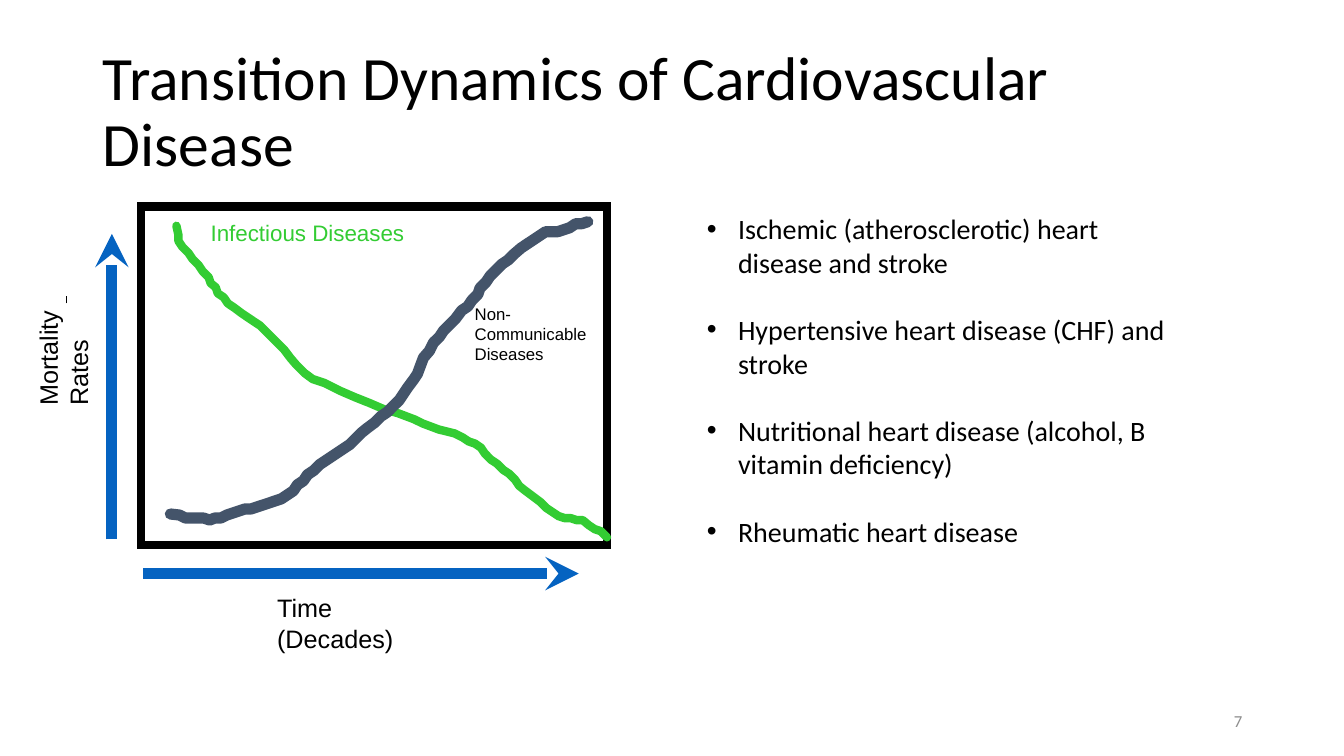
import pptx
import pptx.dml.color
import pptx.enum.shapes
import pptx.enum.text
import pptx.oxml
import pptx.oxml.ns
import pptx.util
from pptx.util import Inches

INFECTIOUS = [
    (175, 224), (177, 233), (177, 239), (181, 245), (187, 251), (191, 257), (197, 263),
    (201, 269), (207, 275), (209, 281), (214, 285), (216, 291), (222, 295), (226, 301),
    (232, 305), (240, 311), (246, 315), (252, 319), (258, 323), (264, 329), (270, 335),
    (276, 341), (282, 347), (288, 355), (294, 362), (302, 370), (310, 376), (322, 380),
    (338, 388), (352, 394), (367, 400), (381, 406), (395, 410), (411, 416), (419, 420),
    (435, 426), (451, 430), (459, 434), (465, 438), (471, 440), (477, 444), (481, 450),
    (487, 456), (493, 460), (499, 466), (505, 470), (511, 476), (515, 482), (520, 486),
    (528, 492), (536, 498), (542, 504), (548, 508), (554, 512), (560, 514), (566, 514),
    (572, 516), (578, 516), (584, 521), (590, 525), (596, 527), (602, 533),
]
NON_COMMUNICABLE = [
    (169, 510), (178, 511), (184, 514), (190, 514), (196, 514), (202, 514), (208, 516),
    (213, 514), (219, 514), (225, 511), (231, 509), (237, 507), (243, 505), (249, 505),
    (255, 503), (261, 501), (267, 499), (273, 497), (279, 495), (285, 491), (291, 487),
    (295, 481), (301, 477), (305, 471), (311, 467), (317, 461), (323, 457), (329, 453),
    (335, 449), (341, 445), (347, 441), (353, 435), (359, 429), (364, 425), (372, 419),
    (378, 413), (384, 409), (390, 403), (396, 397), (400, 391), (404, 385), (410, 377),
    (414, 371), (420, 355), (426, 348), (430, 340), (436, 334), (440, 328), (446, 322),
    (452, 316), (458, 308), (464, 304), (468, 298), (474, 292), (476, 286), (482, 280),
    (486, 274), (492, 268), (498, 262), (504, 258), (510, 252), (517, 246), (523, 242),
    (529, 238), (535, 234), (541, 230), (547, 230), (553, 230), (559, 228), (565, 226),
    (571, 222), (577, 222), (583, 220),
]
CAUSES = [
    "Ischemic (atherosclerotic) heart disease and stroke",
    "Hypertensive heart disease (CHF) and stroke",
    "Nutritional heart disease (alcohol, B vitamin deficiency)",
    "Rheumatic heart disease",
]


def colour(value):
    return pptx.dml.color.RGBColor.from_string(value)


class SlideBuilder:
    """Draws styled elements on one slide."""

    BLACK, ARROW, GREEN, SLATE, GREY = "000000", "0563C1", "33CC33", "44546A", "8C8C8C"
    HEADING_FONT, LABEL_FONT = "Calibri", "Arial"

    def __init__(self, slide):
        self.slide = slide

    def place(self, shape, left, top, width, height):
        shape.left, shape.top = Inches(left), Inches(top)
        shape.width, shape.height = Inches(width), Inches(height)

    def style(self, paragraph, size, font, hex_value):
        paragraph.font.size = pptx.util.Pt(size)
        paragraph.font.name = font
        paragraph.font.color.rgb = colour(hex_value)

    def stroke(self, shape, hex_value, width):
        shape.line.color.rgb = colour(hex_value)
        shape.line.width = pptx.util.Pt(width)

    def add_xml(self, parent, tag, **attributes):
        child = pptx.oxml.ns.qn(tag)
        element = parent.makeelement(child, attributes)
        parent.append(element)

    def title(self, text, *box):
        heading = self.slide.shapes.title
        self.place(heading, *box)
        heading.text_frame.text = text
        heading.text_frame.vertical_anchor = pptx.enum.text.MSO_ANCHOR.MIDDLE
        heading.text_frame.auto_size = pptx.enum.text.MSO_AUTO_SIZE.NONE
        paragraph = heading.text_frame.paragraphs[0]
        paragraph.alignment = pptx.enum.text.PP_ALIGN.LEFT
        paragraph.line_spacing = 0.9
        self.style(paragraph, 44, self.HEADING_FONT, self.BLACK)

    def bullets(self, items, *box):
        body = self.slide.placeholders[1]
        self.place(body, *box)
        body.text_frame.text = "\n".join(items)
        body.text_frame.auto_size = pptx.enum.text.MSO_AUTO_SIZE.NONE
        for paragraph in body.text_frame.paragraphs:
            self.style(paragraph, 20, self.HEADING_FONT, self.BLACK)
            paragraph.space_before = pptx.util.Pt(0)
            paragraph.space_after = pptx.util.Pt(24)
            properties = paragraph._p.get_or_add_pPr()
            properties.set("marL", str(Inches(0.31)))
            properties.set("indent", str(Inches(-0.31)))
            self.add_xml(properties, "a:buFont", typeface="Arial")
            self.add_xml(properties, "a:buChar", char="•")

    def label(self, text, box, size=18, hex_value=BLACK, font=LABEL_FONT, wrap=True,
              rotation=0, align=pptx.enum.text.PP_ALIGN.LEFT,
              anchor=pptx.enum.text.MSO_ANCHOR.TOP):
        caption = self.slide.shapes.add_textbox(*map(Inches, box))
        caption.rotation = rotation
        caption.text_frame.word_wrap = wrap
        caption.text_frame.vertical_anchor = anchor
        caption.text_frame.text = text
        for paragraph in caption.text_frame.paragraphs:
            paragraph.alignment = align
            self.style(paragraph, size, font, hex_value)

    def frame(self, *box):
        border = self.slide.shapes.add_shape(
            pptx.enum.shapes.MSO_SHAPE.RECTANGLE, *map(Inches, box))
        border.shadow.inherit = False
        border.fill.background()
        self.stroke(border, self.BLACK, 6)
        self.add_xml(border.line._get_or_add_ln(), "a:miter", lim="800000")

    def line(self, start, end, hex_value, width, arrow=False):
        axis = self.slide.shapes.add_connector(
            pptx.enum.shapes.MSO_CONNECTOR.STRAIGHT, *map(Inches, start + end))
        self.stroke(axis, hex_value, width)
        if arrow:
            self.add_xml(axis.line._get_or_add_ln(), "a:tailEnd", type="stealth")
        self.add_xml(axis._element.spPr, "a:effectLst")

    def curve(self, points, hex_value, width):
        builder = self.slide.shapes.build_freeform(*points[0], scale=Inches(0.01))
        builder.add_line_segments(points[1:], close=False)
        trend = builder.convert_to_shape()
        trend.shadow.inherit = False
        trend.fill.background()
        self.stroke(trend, hex_value, width)
        outline = trend.line._get_or_add_ln()
        outline.set("cap", "rnd")
        self.add_xml(outline, "a:round")


def main():
    deck = pptx.Presentation()
    deck.slide_width, deck.slide_height = Inches(13.33), Inches(7.5)
    page = SlideBuilder(deck.slides.add_slide(deck.slide_layouts[1]))

    page.title("Transition Dynamics of Cardiovascular Disease", 0.92, 0.4, 11.5, 1.45)
    page.bullets(CAUSES, 6.91, 2.05, 4.97, 3.77)

    page.frame(1.4, 2.05, 4.62, 3.36)
    page.line((1.11, 5.35), (1.11, 2.32), page.ARROW, 8, arrow=True)
    page.line((0.66, 3.01), (0.66, 2.94), page.BLACK, 1)
    page.line((1.42, 5.69), (5.74, 5.69), page.ARROW, 8, arrow=True)
    page.label("Time (Decades)", (2.65, 5.83, 1.52, 0.71))
    page.label("Mortality Rates", (0.03, 3.17, 1.2, 0.71), rotation=270)

    page.curve(INFECTIOUS, page.GREEN, 6)
    page.label("Infectious Diseases", (1.99, 2.13, 2.15, 0.37), 16, page.GREEN, wrap=False)
    page.curve(NON_COMMUNICABLE, page.SLATE, 8)
    page.label("Non-\nCommunicable\nDiseases", (4.61, 2.96, 1.44, 0.71), 12)

    page.label("7", (9.42, 6.95, 3, 0.4), 12, page.GREY, page.HEADING_FONT,
               align=pptx.enum.text.PP_ALIGN.RIGHT,
               anchor=pptx.enum.text.MSO_ANCHOR.MIDDLE)
    deck.save("out.pptx")


if __name__ == "__main__":
    main()
